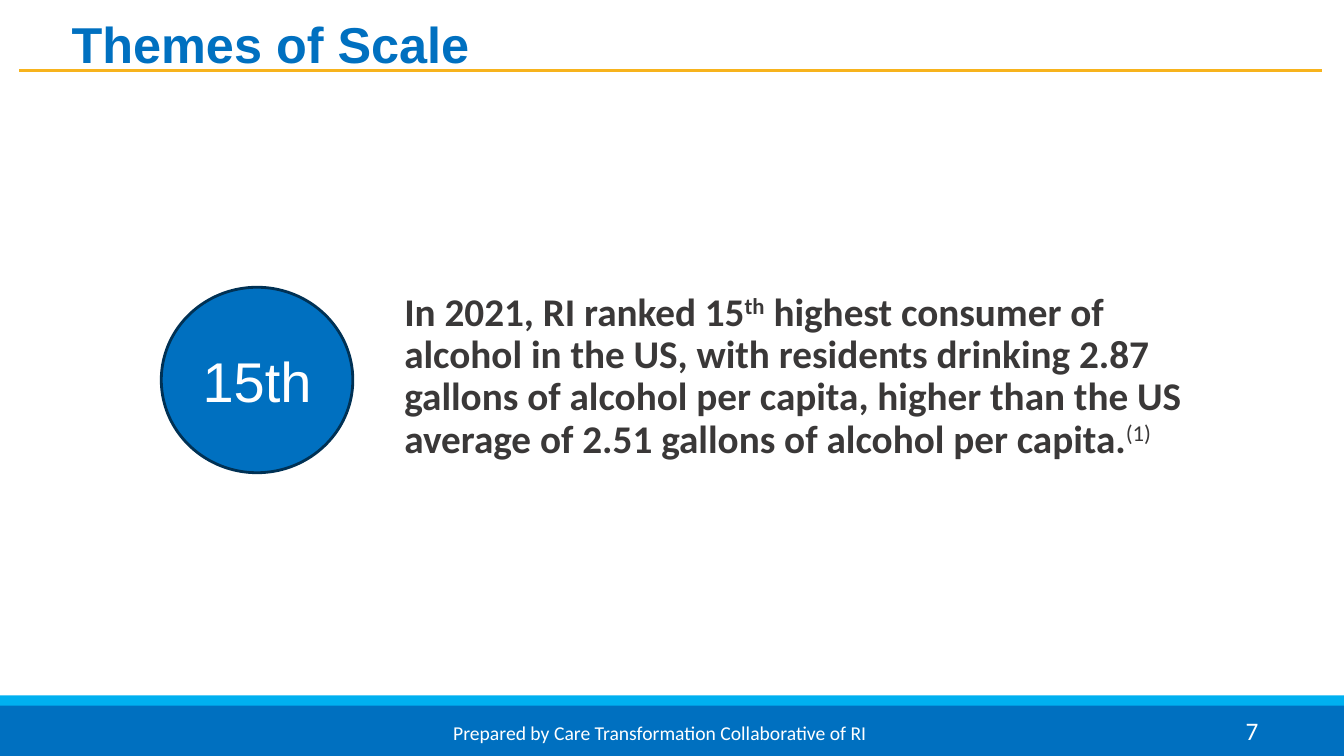
from pptx import Presentation
from pptx.dml.color import RGBColor as RGB
from pptx.enum.shapes import MSO_CONNECTOR as Link, MSO_SHAPE as Form
from pptx.enum.text import MSO_ANCHOR as Anchor, MSO_AUTO_SIZE as Fit, PP_ALIGN as Align
from pptx.oxml.ns import qn
from pptx.util import Inches, Pt


def paint(color, tone):
    color.rgb = RGB.from_string(tone)


class Deck:
    """Style and current slide; lengths are percent of the slide's size."""

    blue, sky, gold, navy = "0070C0", "00B0F0", "F7B31D", "003154"
    white, ink = "FFFFFF", "3A3838"
    head, text = "Arial", "Calibri"

    def __init__(self):
        self.show = Presentation()
        self.show.slide_width, self.show.slide_height = Inches(13.33), Inches(7.5)
        self.slide = self.show.slides.add_slide(self.show.slide_layouts[1])
        self.forms = self.slide.shapes

    def area(self, left, top, width, height):
        wide, high = self.show.slide_width, self.show.slide_height
        return [int(part * size / 100) for part, size in
                zip((left, top, width, height), (wide, high, wide, high))]

    def place(self, item, box):
        item.left, item.top, item.width, item.height = self.area(*box)

    def font(self, run, face, size, tone, bold=False):
        run.font.name, run.font.size, run.font.bold = face, Pt(size), bold
        paint(run.font.color, tone)

    def frame(self, item, anchor):
        frame = item.text_frame
        frame.word_wrap, frame.auto_size = True, Fit.NONE
        frame.vertical_anchor = anchor
        return frame

    def letter(self, item, words, face, size, tone, align, bold=False, anchor=Anchor.MIDDLE):
        para = self.frame(item, anchor).paragraphs[0]
        para.text = words
        para.alignment = align
        self.font(para.runs[0], face, size, tone, bold)

    def shape(self, form, box, fill, edge=None, thick=1):
        item = self.forms.add_shape(form, *self.area(*box))
        item.shadow.inherit = False
        item.fill.solid()
        paint(item.fill.fore_color, fill)
        if edge:
            paint(item.line.color, edge)
            item.line.width = Pt(thick)
        else:
            item.line.fill.background()
        return item

    def rule(self, left, right, top):
        x, y, end, _ = self.area(left, top, right, 0)
        line = self.forms.add_connector(Link.STRAIGHT, x, y, end, y)
        paint(line.line.color, self.gold)
        line.line.width = Pt(2)
        props = line._element.spPr
        props.append(props.makeelement(qn("a:effectLst"), {}))

    def title(self, words, box):
        item = self.forms.title
        self.place(item, box)
        self.letter(item, words, self.head, 36, self.blue, Align.LEFT, True)

    def body(self, parts, box):
        item = self.slide.placeholders[1]
        self.place(item, box)
        para = self.frame(item, Anchor.TOP).paragraphs[0]
        props = para._p.get_or_add_pPr()
        props.set("marL", str(Inches(0.12)))
        props.set("indent", "0")
        props.append(props.makeelement(qn("a:buNone"), {}))
        para.line_spacing, para.space_before = 0.9, Pt(0)
        for words, bold, raised in parts:
            run = para.add_run()
            run.text = words
            self.font(run, self.text, 28, self.ink, bold)
            if raised:
                run._r.get_or_add_rPr().set("baseline", "30000")

    def label(self, words, box, size, align):
        item = self.forms.add_textbox(*self.area(*box))
        self.letter(item, words, self.text, size, self.white, align, anchor=Anchor.TOP)

    def badge(self, words, box):
        item = self.shape(Form.FLOWCHART_CONNECTOR, box, self.blue, self.navy, 2)
        self.letter(item, words, self.head, 40, self.white, Align.CENTER)

    def footer(self, words, box):
        item = self.shape(Form.RECTANGLE, box, self.blue, self.blue, 0.75)
        self.letter(item, words, self.text, 14, self.white, Align.CENTER)


def main():
    deck = Deck()
    deck.shape(Form.RECTANGLE, (0, 92, 100, 8), deck.sky)
    deck.rule(1.43, 98.35, 9.33)
    deck.shape(Form.RECTANGLE, (0, 93.33, 100, 6.67), deck.blue)
    deck.body([
        ("In 2021, RI ranked 15", True, False),
        ("th", True, True),
        (" highest consumer of alcohol in the US, with residents drinking 2.87 gallons of "
         "alcohol per capita, higher than the US average of 2.51 gallons of alcohol per "
         "capita.", True, False),
        ("(1)", False, True),
    ], (28.43, 38, 61.74, 62))
    deck.badge("15th", (12, 38, 14.25, 24.53))
    deck.footer("Prepared by Care Transformation Collaborative of RI", (6.68, 93.73, 84.85, 6.27))
    deck.label("7", (71.87, 94, 22.5, 5.33), 18, Align.RIGHT)
    deck.title("Themes of Scale", (4.58, -2, 94, 15.47))
    deck.show.save("out.pptx")


if __name__ == "__main__":
    main()
